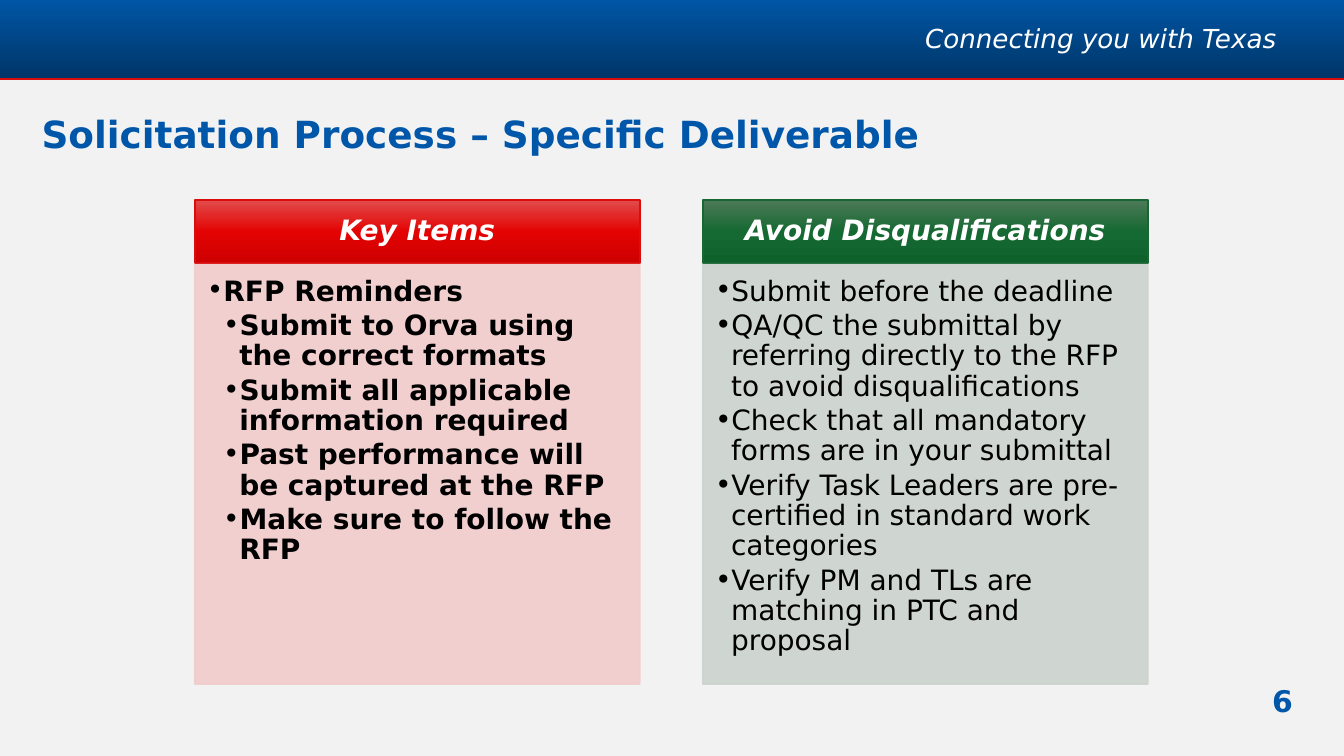
from copy import deepcopy
from dataclasses import dataclass

from pptx import Presentation
from pptx.dml.color import RGBColor as RGB
from pptx.enum.shapes import MSO_CONNECTOR as Connector, MSO_SHAPE as Shape
from pptx.enum.text import MSO_ANCHOR as Anchor, PP_ALIGN as Align
from pptx.oxml.ns import qn
from pptx.oxml.xmlchemy import OxmlElement
from pptx.util import Inches, Pt


@dataclass(frozen=True)
class Theme:
    font: str = "DejaVu Sans"
    background: str = "F2F2F2"
    accent: str = "0056A9"
    rule: str = "D90D0D"
    white: str = "FFFFFF"
    black: str = "000000"
    banner: tuple = ("0057A8", "003567")
    red_header: tuple = ("E24B4B", "E30303", "CC0000")
    red_body: str = "F1CCCC"
    green_header: tuple = ("4D7957", "156932", "0F612B")
    green_line: str = "196533"
    green_body: str = "CCD3CE"
    title_size: int = 20
    number_size: int = 16
    card_size: int = 15
    tagline_size: int = 14


THEME = Theme()
CARD_LEFT, CARD_STEP, CARD_WIDTH = 1.45, 3.78, 3.31
HEADER_TOP, HEADER_HEIGHT = 1.49, 0.47
BODY_TOP, BODY_HEIGHT = 1.97, 3.12
INDENT = 0.12
CARDS = [
    {
        "heading": "Key Items",
        "header": THEME.red_header,
        "line": THEME.rule,
        "body": THEME.red_body,
        "bold": True,
        "items": [
            (1, "RFP Reminders"),
            (2, "Submit to Orva using the correct formats"),
            (2, "Submit all applicable information required"),
            (2, "Past performance will be captured at the RFP"),
            (2, "Make sure to follow the RFP"),
        ],
    },
    {
        "heading": "Avoid Disqualifications",
        "header": THEME.green_header,
        "line": THEME.green_line,
        "body": THEME.green_body,
        "bold": False,
        "items": [
            (1, "Submit before the deadline"),
            (1, "QA/QC the submittal by referring directly to the RFP to avoid disqualifications"),
            (1, "Check that all mandatory forms are in your submittal"),
            (1, "Verify Task Leaders are pre-certified in standard work categories"),
            (1, "Verify PM and TLs are matching in PTC and proposal"),
        ],
    },
]


def set_attributes(target, values):
    for name, value in values.items():
        setattr(target, name, value)


def format_frame(frame, anchor, insets=(0, 0, 0, 0)):
    """Set wrapping, anchor and the left, top, right and bottom insets."""
    left, top, right, bottom = map(Inches, insets)
    set_attributes(frame, {
        "word_wrap": True, "vertical_anchor": anchor,
        "margin_left": left, "margin_top": top,
        "margin_right": right, "margin_bottom": bottom,
    })


def write_text(paragraph, text, size, color, align=Align.LEFT, spacing=0.9, after=0, **style):
    set_attributes(paragraph, {
        "alignment": align, "line_spacing": spacing, "space_after": Pt(after),
    })
    run = paragraph.add_run()
    run.text = text
    set_attributes(run.font, {"name": THEME.font, "size": Pt(size), **style})
    run.font.color.rgb = RGB.from_string(color)


def add_label(slide, box, text, size, color, anchor, **style):
    frame = slide.shapes.add_textbox(*map(Inches, box)).text_frame
    format_frame(frame, anchor)
    write_text(frame.paragraphs[0], text, size, color, **style)


def add_rectangle(slide, box):
    shape = slide.shapes.add_shape(Shape.RECTANGLE, *map(Inches, box))
    shape.shadow.inherit = False
    return shape


def set_line(line, color):
    line.color.rgb = RGB.from_string(color)
    line.width = Pt(1)


def fill_gradient(shape, colors):
    """Fill from top to bottom with evenly spaced colours."""
    shape.fill.gradient()
    shape.fill.gradient_angle = 270
    stop_list = shape.fill.gradient_stops[0]._gs.getparent()
    for _ in colors[2:]:
        stop_list.append(deepcopy(stop_list[-1]))
    for index, (stop, color) in enumerate(zip(shape.fill.gradient_stops, colors)):
        stop.position = index / (len(colors) - 1)
        stop.color.rgb = RGB.from_string(color)


def set_opacity(shape, percent):
    """Apply one opacity to both fill and line."""
    for color in shape._element.spPr.iter(qn("a:srgbClr")):
        alpha = OxmlElement("a:alpha")
        alpha.set("val", str(percent * 1000))
        color.append(alpha)


def add_bullet(paragraph, level):
    paragraph.level = level
    properties = paragraph._p.get_or_add_pPr()
    properties.set("marL", str(Inches(INDENT * level)))
    properties.set("indent", str(Inches(-INDENT)))
    for tag, name, value in (("a:buFont", "typeface", THEME.font), ("a:buChar", "char", "•")):
        element = OxmlElement(tag)
        element.set(name, value)
        properties.append(element)


def add_banner(slide):
    banner = add_rectangle(slide, (-0.01, -0.03, 10.02, 0.62))
    fill_gradient(banner, THEME.banner)
    banner.line.fill.background()
    rule = slide.shapes.add_connector(
        Connector.STRAIGHT, Inches(-0.01), Inches(0.59), Inches(10.01), Inches(0.59))
    set_line(rule.line, THEME.rule)
    rule._element.spPr.append(OxmlElement("a:effectLst"))
    add_label(slide, (6.3, 0, 3.2, 0.6), "Connecting you with Texas", THEME.tagline_size,
              THEME.white, Anchor.MIDDLE, align=Align.RIGHT, italic=True)


def add_card(slide, left, card):
    header = add_rectangle(slide, (left, HEADER_TOP, CARD_WIDTH, HEADER_HEIGHT))
    fill_gradient(header, card["header"])
    set_line(header.line, card["line"])
    format_frame(header.text_frame, Anchor.MIDDLE, (0.12, 0.07, 0.12, 0.07))
    write_text(header.text_frame.paragraphs[0], card["heading"], THEME.card_size,
               THEME.white, align=Align.CENTER, bold=True, italic=True)

    body = add_rectangle(slide, (left, BODY_TOP, CARD_WIDTH, BODY_HEIGHT))
    body.fill.solid()
    body.fill.fore_color.rgb = RGB.from_string(card["body"])
    set_line(body.line, card["body"])
    set_opacity(body, 90)
    frame = body.text_frame
    format_frame(frame, Anchor.TOP, (0.09, 0.09, 0.12, 0.13))
    for index, (level, text) in enumerate(card["items"]):
        paragraph = frame.add_paragraph() if index else frame.paragraphs[0]
        add_bullet(paragraph, level)
        write_text(paragraph, text, THEME.card_size, THEME.black,
                   after=0.15 * THEME.card_size, bold=card["bold"])


def main():
    presentation = Presentation()
    width = Inches(10)
    set_attributes(presentation, {"slide_width": width, "slide_height": width * 9 // 16})
    slide = presentation.slides.add_slide(presentation.slide_layouts[6])
    slide.background.fill.solid()
    slide.background.fill.fore_color.rgb = RGB.from_string(THEME.background)

    add_banner(slide)
    add_label(slide, (8.62, 5.03, 1, 0.32), "6", THEME.number_size, THEME.accent,
              Anchor.BOTTOM, align=Align.RIGHT, bold=True)
    add_label(slide, (0.31, 0.72, 9.14, 0.44), "Solicitation Process – Specific Deliverable",
              THEME.title_size, THEME.accent, Anchor.BOTTOM, spacing=1.0, bold=True)
    for index, card in enumerate(CARDS):
        add_card(slide, CARD_LEFT + index * CARD_STEP, card)
    presentation.save("out.pptx")


if __name__ == "__main__":
    main()
